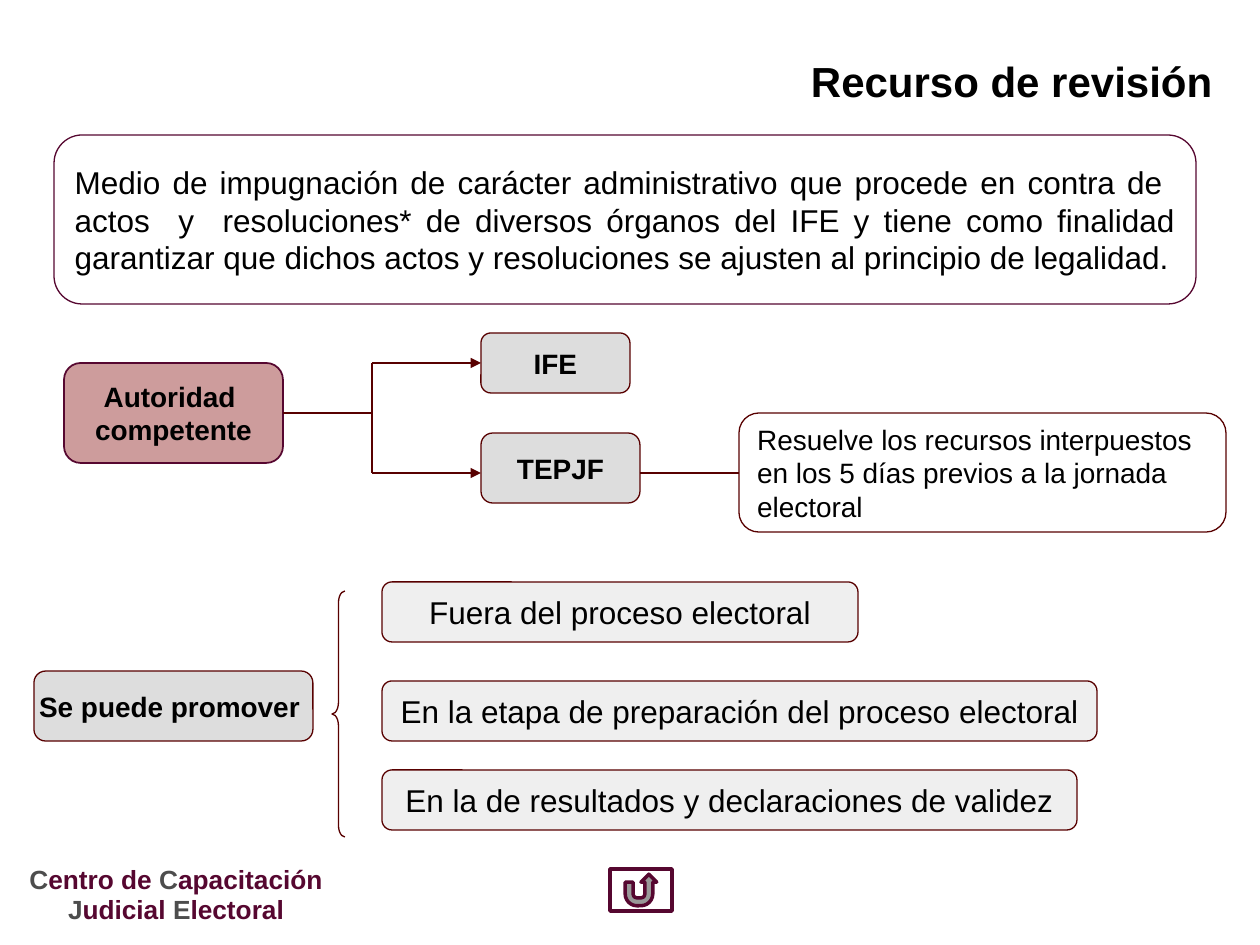
from pptx import Presentation
from pptx.dml.color import RGBColor
from pptx.enum.shapes import MSO_CONNECTOR, MSO_SHAPE
from pptx.enum.text import MSO_ANCHOR, PP_ALIGN
from pptx.oxml.ns import qn
from pptx.util import Pt
from lxml.etree import SubElement

EMU_PER_PX = 914400 / 126
BLACK = RGBColor(0x00, 0x00, 0x00)
WHITE = RGBColor(0xFF, 0xFF, 0xFF)
GRAY = RGBColor(0xDD, 0xDD, 0xDD)
SILVER = RGBColor(0xC0, 0xC0, 0xC0)
DARK_GRAY = RGBColor(0x4D, 0x4D, 0x4D)
MAROON = RGBColor(0x80, 0x00, 0x00)
DARK_RED = RGBColor(0x58, 0x00, 0x00)
PURPLE = RGBColor(0x56, 0x07, 0x30)


def px(*lengths):
    return [round(length * EMU_PER_PX) for length in lengths]


class SlideBuilder:
    font_name = "Arial"

    def __init__(self, page):
        self.page = page

    def format(self, paragraph, size, bold=False, align=PP_ALIGN.CENTER):
        paragraph.alignment = align
        paragraph.font.name = self.font_name
        paragraph.font.size = Pt(size)
        paragraph.font.bold = bold
        paragraph.font.color.rgb = BLACK

    def title(self, text, bounds):
        box = self.page.shapes.title
        box.left, box.top, box.width, box.height = px(*bounds)
        box.text_frame.text = text
        box.text_frame.vertical_anchor = MSO_ANCHOR.MIDDLE
        self.format(box.text_frame.paragraphs[0], 24, True, PP_ALIGN.RIGHT)

    def shape(self, kind, bounds, fill=None, alpha=None, line=DARK_RED, weight=0.75):
        shape = self.page.shapes.add_shape(kind, *px(*bounds))
        shape.shadow.inherit = False
        shape.line.color.rgb = line
        shape.line.width = Pt(weight)
        if fill is None:
            shape.fill.background()
        else:
            shape.fill.solid()
            shape.fill.fore_color.rgb = fill
        if alpha is not None:
            color = shape._element.spPr.find(qn("a:solidFill"))[0]
            SubElement(color, qn("a:alpha")).set("val", str(alpha * 1000))
        return shape

    def label(self, text, bounds, size, bold=False, align=PP_ALIGN.CENTER,
              wrap=False, kind=MSO_SHAPE.ROUNDED_RECTANGLE, **style):
        frame = self.shape(kind, bounds, **style).text_frame
        frame.word_wrap = wrap
        frame.vertical_anchor = MSO_ANCHOR.MIDDLE
        frame.text = text
        for paragraph in frame.paragraphs:
            self.format(paragraph, size, bold, align)

    def connector(self, start, end, arrow=False):
        line = self.page.shapes.add_connector(MSO_CONNECTOR.STRAIGHT, *px(*start, *end))
        line.line.color.rgb = DARK_RED
        line.line.width = Pt(0.75)
        if arrow:
            SubElement(line.line._get_or_add_ln(), qn("a:tailEnd")).set("type", "triangle")
        SubElement(line._element.spPr, qn("a:effectLst"))

    def signature(self, lines, bounds):
        frame = self.page.shapes.add_textbox(*px(*bounds)).text_frame
        frame.word_wrap = True
        frame.margin_top = 0
        for index, words in enumerate(lines):
            paragraph = frame.paragraphs[0] if index == 0 else frame.add_paragraph()
            self.format(paragraph, 15, True)
            paragraph.line_spacing = 0.96
            for text, color in words:
                span = paragraph.add_run()
                span.text = text
                span.font.color.rgb = color


def main():
    deck = Presentation()
    deck.slide_width, deck.slide_height = px(1260, 945)
    builder = SlideBuilder(deck.slides.add_slide(deck.slide_layouts[5]))

    builder.signature(
        [[("C", DARK_GRAY), ("entro de ", PURPLE), ("C", DARK_GRAY), ("apacitación", PURPLE)],
         [("J", DARK_GRAY), ("udicial ", PURPLE), ("E", DARK_GRAY), ("lectoral", PURPLE)]],
        (11, 865, 330, 64))
    builder.title("Recurso de revisión", (44, 49, 1181, 63))

    builder.label(
        "Medio de impugnación de carácter administrativo que procede en contra de  "
        "actos  y  resoluciones* de diversos órganos del IFE y tiene como finalidad "
        "garantizar que dichos actos y resoluciones se ajusten al principio de legalidad.",
        (54, 135, 1142, 169), 18, align=PP_ALIGN.JUSTIFY, wrap=True,
        kind=MSO_SHAPE.FLOWCHART_ALTERNATE_PROCESS, line=PURPLE)

    builder.label("Autoridad \ncompetente", (64, 363, 219, 100), 16, True,
                  fill=MAROON, alpha=39, line=PURPLE, weight=1)
    builder.label("IFE", (481, 333, 149, 60), 16, True, fill=GRAY)
    builder.label("TEPJF", (481, 433, 159, 70), 16, True, fill=GRAY)
    builder.label(
        "Resuelve los recursos interpuestos en los 5 días previos a la jornada electoral",
        (739, 413, 487, 119), 16, align=PP_ALIGN.LEFT, wrap=True)

    builder.connector((283, 413), (372, 413))
    builder.connector((372, 363), (372, 473))
    for y in (363, 473):
        builder.connector((372, y), (481, y), arrow=True)
    builder.connector((640, 473), (739, 473))

    builder.label("Se puede promover ", (34, 671, 279, 70), 16, True, fill=GRAY)
    brace = builder.shape(MSO_SHAPE.LEFT_BRACE, (332, 591, 13, 246))
    brace.adjustments[0] = 0.9
    for text, top, width in (
        ("Fuera del proceso electoral", 582, 476),
        ("En la etapa de preparación del proceso electoral", 681, 715),
        ("En la de resultados y declaraciones de validez", 770, 695),
    ):
        builder.label(text, (382, top, width, 60), 18, fill=SILVER, alpha=24)

    builder.shape(MSO_SHAPE.ACTION_BUTTON_RETURN, (610, 869, 62, 42),
                  fill=WHITE, line=PURPLE, weight=2)
    deck.save("out.pptx")


if __name__ == "__main__":
    main()
